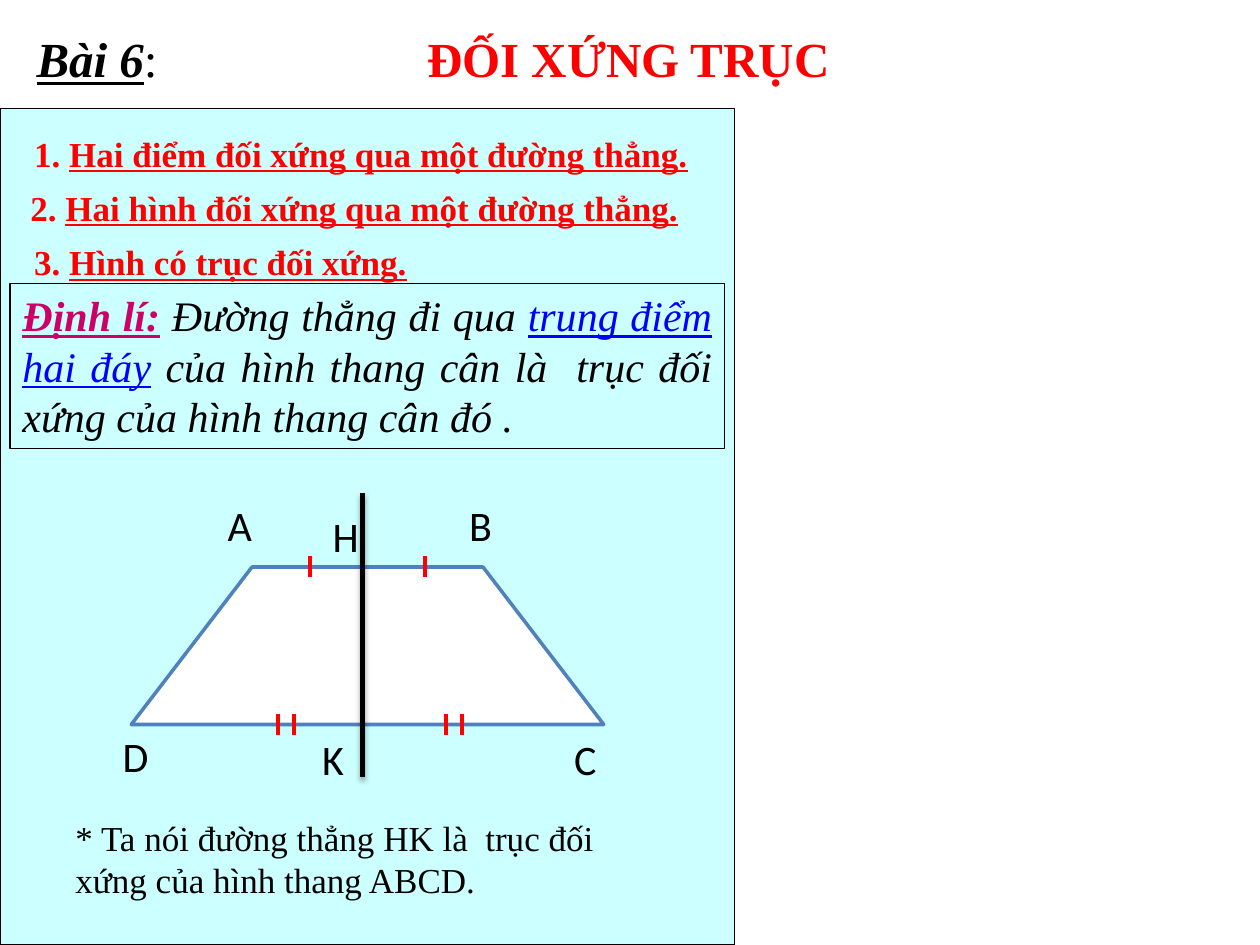
from typing import NamedTuple

from lxml.etree import SubElement
from pptx import Presentation
from pptx.dml.color import RGBColor
from pptx.enum.shapes import MSO_CONNECTOR, MSO_SHAPE
from pptx.enum.text import MSO_ANCHOR, MSO_AUTO_SIZE, PP_ALIGN
from pptx.oxml.ns import qn
from pptx.util import Inches, Pt

BLACK = RGBColor(0x00, 0x00, 0x00)
WHITE = RGBColor(0xFF, 0xFF, 0xFF)
RED = RGBColor(0xFF, 0x00, 0x00)
BLUE = RGBColor(0x00, 0x00, 0xFF)
MAGENTA = RGBColor(0xCC, 0x00, 0x66)
STEEL = RGBColor(0x4F, 0x81, 0xBD)
CYAN = RGBColor(0xCC, 0xFF, 0xFF)

SERIF, SANS = "Times New Roman", "Calibri"
CELL = Inches(1) // 24  # the figure stands on a grid of 24 cells to the inch


class Words(NamedTuple):
    text: str
    color: RGBColor = BLACK
    bold: bool = False
    italic: bool = False
    underline: bool = False


class Vertex(NamedTuple):
    name: str
    column: float
    row: float


TITLE = [
    Words("Bài 6", BLACK, True, True, True),
    Words(":\t"),
    Words("ĐỐI XỨNG TRỤC", RED, True),
]
HEADINGS = [
    "Hai điểm đối xứng qua một đường thẳng.",
    "Hai hình đối xứng qua một đường thẳng.",
    "Hình có trục đối xứng.",
]
THEOREM = [
    Words("Định lí:", MAGENTA, True, True, True),
    Words(" ", BLUE),
    Words("Đường thẳng đi qua ", italic=True),
    Words("trung điểm hai đáy", BLUE, italic=True, underline=True),
    Words(" ", BLUE, italic=True),
    Words("của hình thang cân là  trục đối xứng của hình thang cân đó .", italic=True),
]
CONCLUSION = [Words("* Ta nói đường thẳng HK là  trục đối xứng của hình thang ABCD.")]

TOP_ROW, BASE_ROW = 108, 138
TRAPEZOID = [(25, BASE_ROW), (47.5, TOP_ROW), (92.5, TOP_ROW), (115, BASE_ROW)]
VERTICES = [
    Vertex("A", 41, 94), Vertex("B", 87, 94),
    Vertex("C", 107, 138.5), Vertex("D", 21, 138),
    Vertex("H", 61, 96), Vertex("K", 59, 138.5),
]
TICKS = {TOP_ROW: [59, 81], BASE_ROW: [53, 56, 85, 88]}


def cells(count: float) -> int:
    return round(count * CELL)


def place(shape, left: float, top: float, width: float, height: float) -> None:
    shape.left, shape.top = Inches(left), Inches(top)
    shape.width, shape.height = Inches(width), Inches(height)


def add_words(paragraph, words: list[Words], size: float, font: str = SERIF) -> None:
    for part in words:
        run = paragraph.add_run()
        run.text = part.text
        run.font.name, run.font.size = font, Pt(size)
        run.font.bold, run.font.italic = part.bold, part.italic
        run.font.underline = part.underline
        run.font.color.rgb = part.color


def start_frame(shape):
    frame = shape.text_frame
    frame.word_wrap = True
    frame.auto_size = MSO_AUTO_SIZE.NONE
    frame.vertical_anchor = MSO_ANCHOR.TOP
    return frame


def style_shape(shape, fill, line: RGBColor, width: float) -> None:
    shape.shadow.inherit = False
    if fill is None:
        shape.fill.background()
    else:
        shape.fill.solid()
        shape.fill.fore_color.rgb = fill
    shape.line.color.rgb = line
    shape.line.width = Pt(width)


def add_rectangle(slide, left: float, top: float, width: float, height: float, fill):
    shape = slide.shapes.add_shape(
        MSO_SHAPE.RECTANGLE, Inches(left), Inches(top), Inches(width), Inches(height))
    style_shape(shape, fill, BLACK, 0.75)
    return shape


def add_vertical(slide, column: float, top: float, bottom: float, color: RGBColor, width: float):
    """Draw a vertical line and return its effect list, still empty."""
    line = slide.shapes.add_connector(
        MSO_CONNECTOR.STRAIGHT, cells(column), cells(top), cells(column), cells(bottom))
    line.line.color.rgb = color
    line.line.width = Pt(width)
    return SubElement(line._element.spPr, qn("a:effectLst"))


def add_soft_shadow(effects) -> None:
    shadow = SubElement(effects, qn("a:outerShdw"), blurRad=str(Pt(3.1)),
                        dist=str(Pt(1.8)), dir="5400000", rotWithShape="0")
    color = SubElement(shadow, qn("a:srgbClr"), val=str(BLACK))
    SubElement(color, qn("a:alpha"), val="35000")


def fill_title(title) -> None:
    place(title, 0, 0.18, 10, 0.57)
    frame = start_frame(title)
    frame.margin_left = Inches(0.29)
    paragraph = frame.paragraphs[0]
    paragraph.alignment = PP_ALIGN.LEFT
    tabs = SubElement(paragraph._p.get_or_add_pPr(), qn("a:tabLst"))
    SubElement(tabs, qn("a:tab"), pos=str(Inches(3.1)), algn="l")
    add_words(paragraph, TITLE, 28)


def fill_headings(body) -> None:
    place(body, 0.14, 1, 5.65, 1.25)
    frame = start_frame(body)
    for number, heading in enumerate(HEADINGS, start=1):
        paragraph = frame.paragraphs[0] if number == 1 else frame.add_paragraph()
        paragraph.space_before = Pt(0 if number == 1 else 7)
        properties = paragraph._p.get_or_add_pPr()
        properties.set("marL", str(Inches(0.03 * (number % 2))))
        properties.set("indent", "0")
        SubElement(properties, qn("a:buNone"))
        add_words(paragraph, [Words(f"{number}. ", RED, True),
                              Words(heading, RED, True, underline=True)], 20)


def draw_figure(slide) -> None:
    builder = slide.shapes.build_freeform(*TRAPEZOID[0], scale=CELL)
    builder.add_line_segments(TRAPEZOID[1:], close=True)
    style_shape(builder.convert_to_shape(), WHITE, STEEL, 2)
    for vertex in VERTICES:
        label = slide.shapes.add_textbox(
            cells(vertex.column), cells(vertex.row), cells(10), cells(12))
        add_words(start_frame(label).paragraphs[0], [Words(vertex.name)], 24, SANS)
    add_soft_shadow(add_vertical(slide, 69, 94, 148, BLACK, 3))
    for row, columns in TICKS.items():
        for column in columns:
            add_vertical(slide, column, row - 2, row + 2, RED, 2)


def main() -> None:
    presentation = Presentation()
    presentation.slide_width, presentation.slide_height = Inches(10), Inches(7.5)
    slide = presentation.slides.add_slide(presentation.slide_layouts[1])

    panel = add_rectangle(slide, 0, 0.86, 5.83, 6.64, CYAN)
    slide.shapes._spTree.insert(2, panel._element)  # behind the placeholders
    fill_title(slide.shapes.title)
    fill_headings(slide.placeholders[1])

    theorem = start_frame(add_rectangle(slide, 0.08, 2.25, 5.67, 1.31, None)).paragraphs[0]
    theorem.alignment = PP_ALIGN.JUSTIFY
    add_words(theorem, THEOREM, 24)

    draw_figure(slide)

    conclusion = slide.shapes.add_textbox(Inches(0.5), Inches(6.43), Inches(4.58), Inches(0.77))
    add_words(start_frame(conclusion).paragraphs[0], CONCLUSION, 20)
    presentation.save("out.pptx")


if __name__ == "__main__":
    main()
